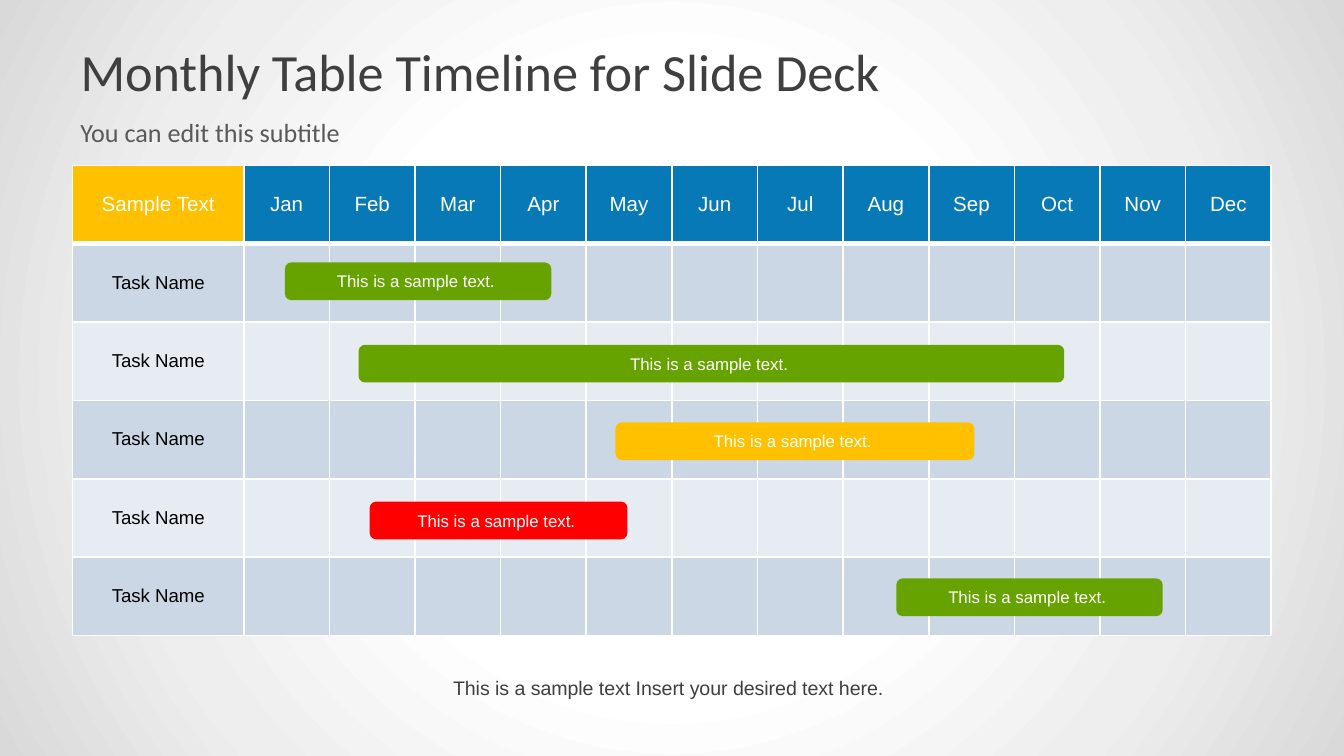
from collections import namedtuple
from dataclasses import dataclass

from lxml import etree
from pptx import Presentation
from pptx.dml.color import RGBColor
from pptx.enum.shapes import MSO_SHAPE
from pptx.enum.text import MSO_ANCHOR, PP_ALIGN
from pptx.oxml import parse_xml
from pptx.oxml.ns import nsdecls, qn
from pptx.util import Inches, Pt

ROUNDED = MSO_SHAPE.ROUNDED_RECTANGLE
MIDDLE, TOP = MSO_ANCHOR.MIDDLE, MSO_ANCHOR.TOP
CENTER, LEFT = PP_ALIGN.CENTER, PP_ALIGN.LEFT

Box = namedtuple("Box", "left top width height")
Bar = namedtuple("Bar", "start months middle color")  # in columns and rows


@dataclass(frozen=True)
class Theme:
    heading_font: str = "Calibri"
    body_font: str = "Arial"
    title_size: float = 28
    subtitle_size: float = 14
    header_size: float = 11
    footer_size: float = 10.5
    task_size: float = 10
    bar_size: float = 9
    dark: str = "3F3F3F"
    gray: str = "595959"
    black: str = "000000"
    white: str = "FFFFFF"
    blue: str = "0779B7"
    amber: str = "FFC000"
    green: str = "67A300"
    red: str = "FF0000"
    bands: tuple = ("CCD7E6", "E7ECF3")
    backdrop: tuple = ((41, "FFFFFF"), (72, "EEEEEE"), (100, "D9D9D9"))


THEME = Theme()
MONTHS = "Jan Feb Mar Apr May Jun Jul Aug Sep Oct Nov Dec".split()
TASKS = ["Task Name"] * 5
LABEL_UNITS = 2  # the label column is as wide as two months
UNITS = LABEL_UNITS + len(MONTHS)
ROWS = 1 + len(TASKS)
BARS = [
    Bar(0.48, 3.11, 1.48, THEME.green),
    Bar(1.34, 8.24, 2.53, THEME.green),
    Bar(4.34, 4.19, 3.52, THEME.amber),
    Bar(1.47, 3.01, 4.53, THEME.red),
    Bar(7.62, 3.11, 5.51, THEME.green),
]
BAR_HEIGHT = 0.48  # share of a row


def emu(box):
    return [Inches(length) for length in box]


def write(frame, text, size, color, font=THEME.body_font, align=CENTER, anchor=MIDDLE):
    frame.word_wrap = True
    frame.vertical_anchor = anchor
    para = frame.paragraphs[0]
    para.text = text
    para.alignment = align
    para.font.name = font
    para.font.size = Pt(size)
    para.font.color.rgb = RGBColor.from_string(color)


def paint(fill, color):
    fill.solid()
    fill.fore_color.rgb = RGBColor.from_string(color)


def radial_background(page):
    page.background.fill.solid()
    properties = page.element.find(".//" + qn("p:bgPr"))
    stops = "".join(
        f'<a:gs pos="{share * 1000}"><a:srgbClr val="{color}"/></a:gs>'
        for share, color in THEME.backdrop
    )
    properties.replace(properties[0], parse_xml(
        f'<a:gradFill {nsdecls("a")} rotWithShape="1"><a:gsLst>{stops}</a:gsLst>'
        '<a:path path="circle"><a:fillToRect l="50000" t="50000" r="50000" b="50000"/>'
        "</a:path></a:gradFill>"
    ))


def set_borders(cell, top=1, bottom=1):
    properties = cell._tc.get_or_add_tcPr()
    widths = {"a:lnL": 1, "a:lnR": 1, "a:lnT": top, "a:lnB": bottom}
    for index, (tag, width) in enumerate(widths.items()):
        line = etree.Element(qn(tag), w=str(Pt(width)))
        fill = etree.SubElement(line, qn("a:solidFill"))
        etree.SubElement(fill, qn("a:srgbClr"), val=THEME.white)
        properties.insert(index, line)


def add_heading(page, box):
    title = page.shapes.title
    title_height = box.height * 0.59
    title.left, title.top, title.width, title.height = emu(
        box._replace(height=title_height))
    write(title.text_frame, "Monthly Table Timeline for Slide Deck",
          THEME.title_size, THEME.dark, THEME.heading_font, LEFT)
    subtitle = page.shapes.add_textbox(*emu(box._replace(
        top=box.top + title_height, height=box.height - title_height)))
    write(subtitle.text_frame, "You can edit this subtitle",
          THEME.subtitle_size, THEME.gray, THEME.heading_font, LEFT, TOP)


def add_calendar(page, box):
    table = page.shapes.add_table(ROWS, 1 + len(MONTHS), *emu(box)).table
    table.first_row = table.horz_banding = False
    for index, column in enumerate(table.columns):
        units = 1 if index else LABEL_UNITS
        column.width = Inches(box.width / UNITS * units)
    for row in table.rows:
        row.height = Inches(box.height / ROWS)

    for index, label in enumerate(["Sample Text"] + MONTHS):
        cell = table.cell(0, index)
        paint(cell.fill, THEME.blue if index else THEME.amber)
        set_borders(cell, bottom=3)
        cell.vertical_anchor = MIDDLE
        write(cell.text_frame, label, THEME.header_size, THEME.white)

    for row, task in enumerate(TASKS, start=1):
        for column in range(1 + len(MONTHS)):
            cell = table.cell(row, column)
            paint(cell.fill, THEME.bands[(row - 1) % 2])
            set_borders(cell, top=3 if row == 1 else 1)
        label_cell = table.cell(row, 0)
        label_cell.vertical_anchor = MIDDLE
        write(label_cell.text_frame, task, THEME.task_size, THEME.black)


def add_bars(page, box):
    month, row = box.width / UNITS, box.height / ROWS
    for bar in BARS:
        place = Box(box.left + (LABEL_UNITS + bar.start) * month,
                    box.top + (bar.middle - BAR_HEIGHT / 2) * row,
                    bar.months * month, BAR_HEIGHT * row)
        shape = page.shapes.add_shape(ROUNDED, *emu(place))
        shape.shadow.inherit = False
        paint(shape.fill, bar.color)
        shape.line.fill.background()
        write(shape.text_frame, "This is a sample text. ", THEME.bar_size, THEME.white)


def add_footer(page, box):
    note = page.shapes.add_textbox(*emu(box))
    write(note.text_frame, "This is a sample text Insert your desired text here. ",
          THEME.footer_size, THEME.dark, anchor=TOP)


def main():
    deck = Presentation()
    deck.slide_width, deck.slide_height = Inches(10), Inches(10 * 9 / 16)
    page = deck.slides.add_slide(deck.slide_layouts.get_by_name("Title Only"))
    calendar = Box(0.54, 1.23, 8.92, 3.5)
    radial_background(page)
    add_heading(page, Box(0.5, 0.23, 9, 1))
    add_calendar(page, calendar)
    add_bars(page, calendar)
    add_footer(page, Box(2.58, 4.98, 4.83, 0.28))
    deck.save("out.pptx")


if __name__ == "__main__":
    main()
